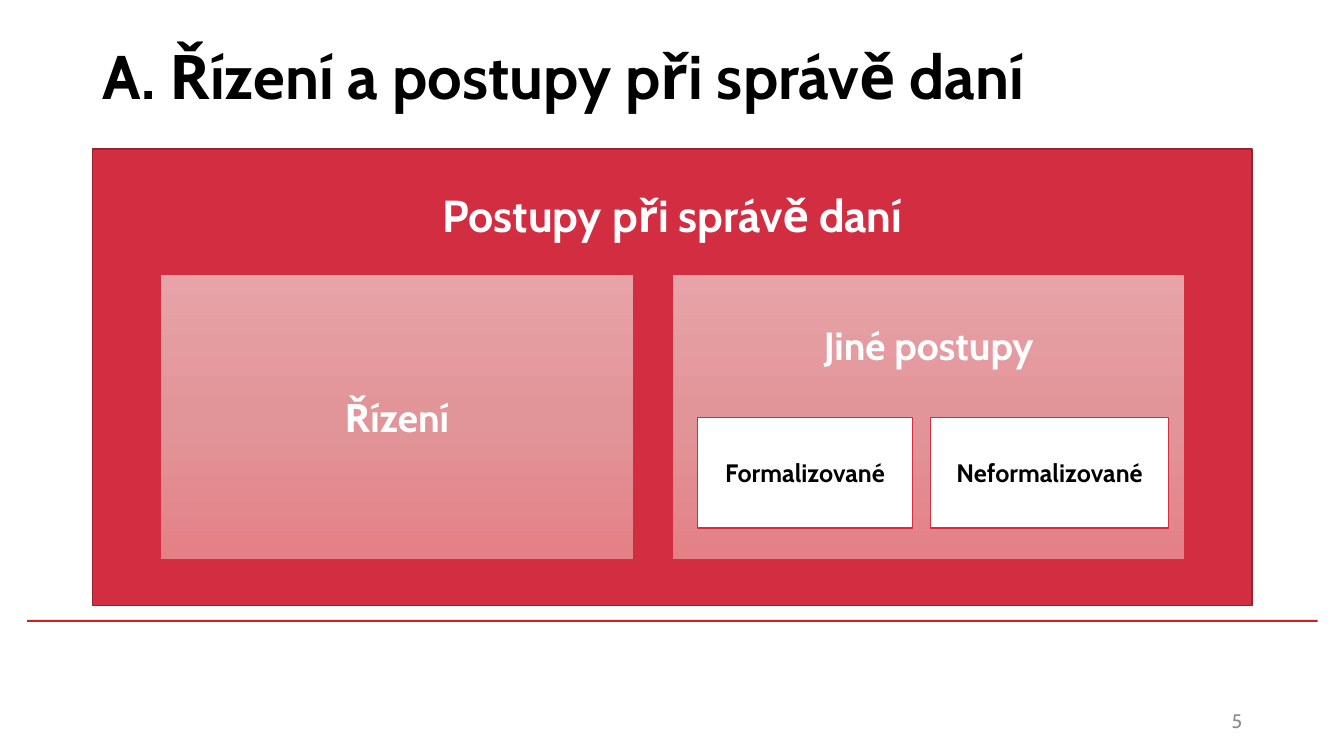
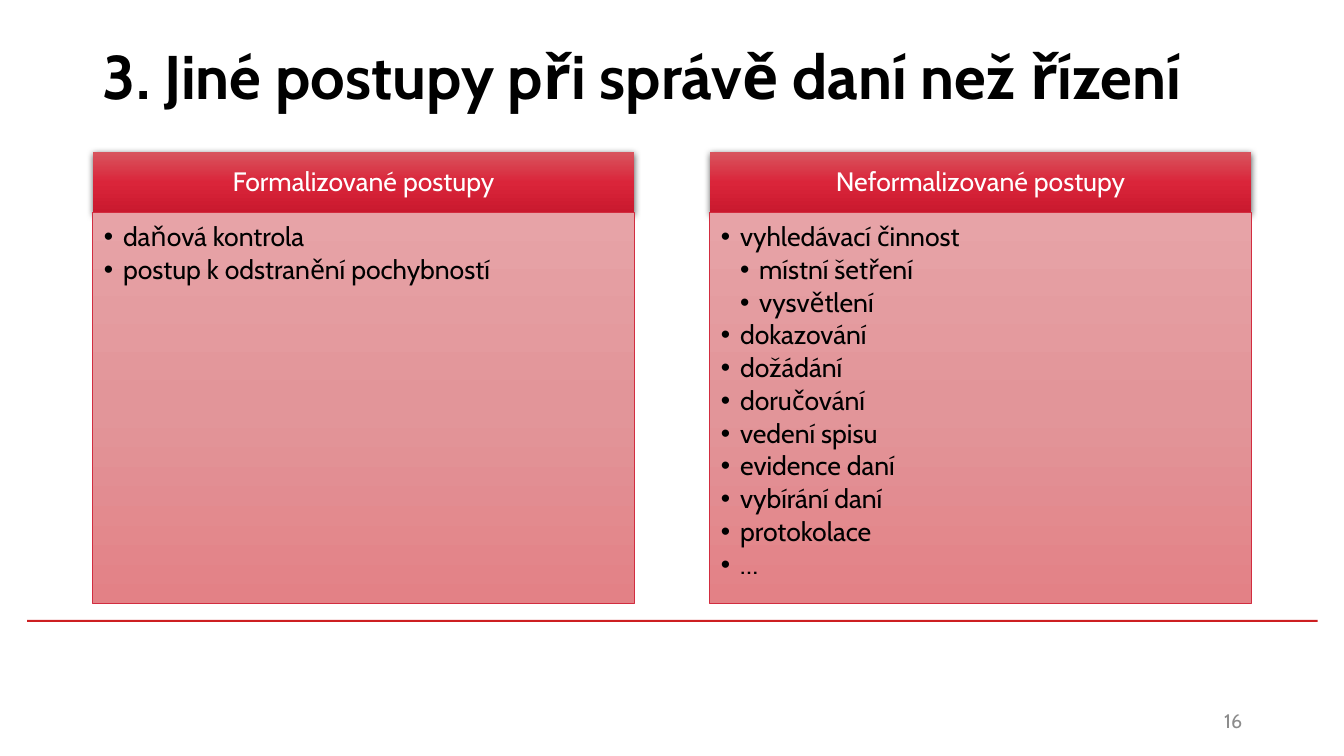
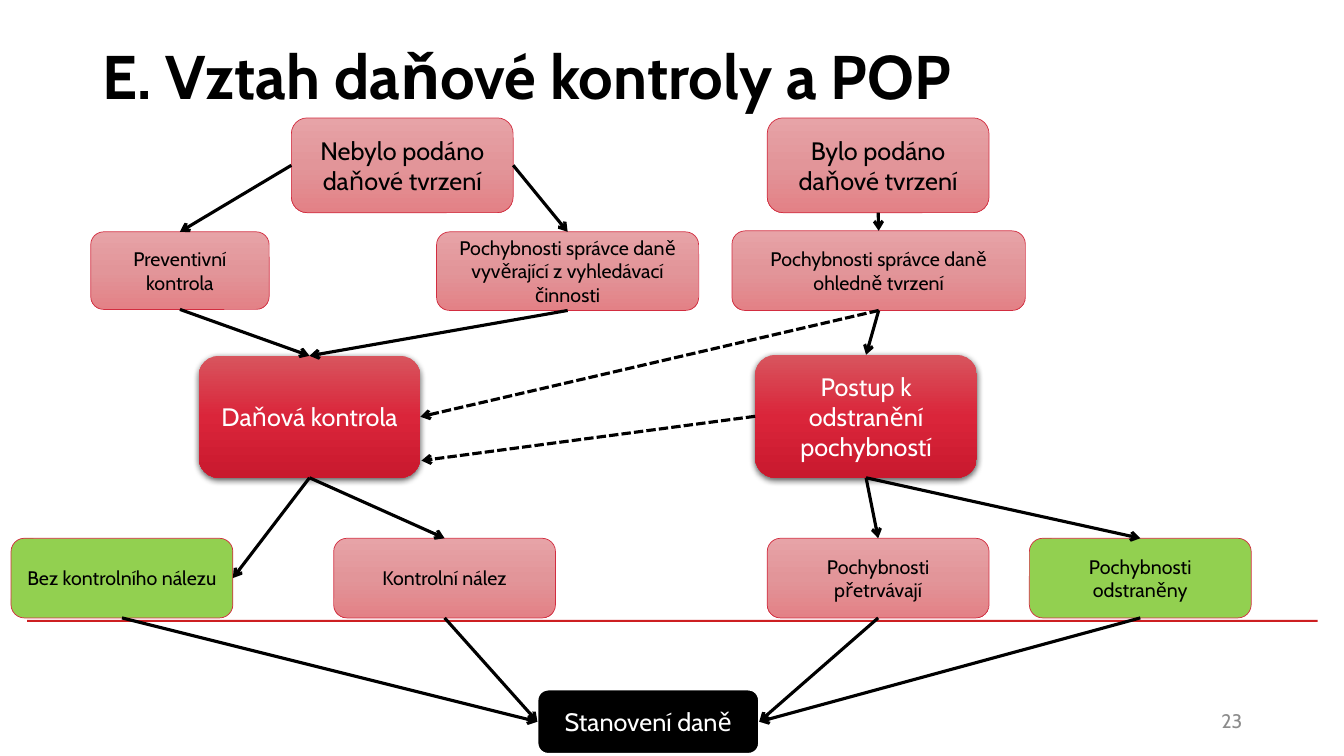
from dataclasses import dataclass
from typing import Any, Optional, Sequence

import lxml.etree
import pptx
import pptx.dml.color
import pptx.enum.dml
import pptx.enum.shapes
import pptx.enum.text
import pptx.oxml.ns
import pptx.util

Inches = pptx.util.Inches
Pt = pptx.util.Pt
qn = pptx.oxml.ns.qn
Align = pptx.enum.text.PP_ALIGN
Anchor = pptx.enum.text.MSO_ANCHOR
Preset = pptx.enum.shapes.MSO_SHAPE


# Shared look
@dataclass(frozen=True)
class Theme:
    font: str = "Cabin"
    black: str = "000000"
    white: str = "FFFFFF"
    grey: str = "8C8C8C"
    rule: str = "CD1F21"
    red: str = "D22D40"
    dark_red: str = "9B212F"
    green: str = "92D050"
    pink_gradient: tuple[str, ...] = ("E7A3A7", "E29599", "E38186")
    red_gradient: tuple[str, ...] = ("D8555E", "DA253A", "C9192E")
    title_size: int = 44
    heading_size: int = 32
    subheading_size: int = 28
    list_size: int = 19
    label_size: int = 18
    small_size: int = 14


THEME = Theme()


@dataclass(frozen=True)
class Style:
    """One fill colour is solid, several make a vertical gradient."""
    fill: tuple[str, ...]
    line: Optional[str] = THEME.red
    line_width: float = 0.5
    text: str = THEME.black
    shadow: bool = False


PINK = Style(THEME.pink_gradient)
PINK_WHITE_TEXT = Style(THEME.pink_gradient, text=THEME.white)
RED = Style(THEME.red_gradient, line=None, text=THEME.white, shadow=True)
GREEN = Style((THEME.green,))
BLACK = Style((THEME.black,), THEME.white, 1.5, THEME.white)
FRAME = Style((THEME.red,), THEME.dark_red, 1, THEME.white)
OUTLINED = Style((THEME.white,), line_width=1)
RULE = Style((THEME.rule,), line=None)


@dataclass(frozen=True)
class Area:
    left: float
    top: float
    width: float
    height: float

    def lengths(self) -> list[int]:
        return [Inches(value) for value in (self.left, self.top, self.width, self.height)]


@dataclass(frozen=True)
class Box:
    text: str
    area: Area
    style: Style = PINK
    size: int = THEME.small_size
    bold: bool = False
    top_inset: Optional[float] = None


@dataclass(frozen=True)
class Link:
    start: str
    start_side: int
    end: str
    end_side: int
    dashed: bool = False


@dataclass(frozen=True)
class Column:
    heading: str
    items: tuple[str, ...]
    sub_items: tuple[str, ...] = ()


TITLE_AREA = Area(0.92, 0.02, 11.5, 1.45)
NUMBER_AREA = Area(9.42, 6.95, 3, 0.4)
RULE_AREA = Area(0.27, 6.15, 12.8, 0.02)
TOP, LEFT, BOTTOM, RIGHT = range(4)


def rgb(colour: str) -> pptx.dml.color.RGBColor:
    return pptx.dml.color.RGBColor.from_string(colour)


def add_xml(parent: Any, tag: str, **attributes: Any) -> Any:
    values = {name: str(value) for name, value in attributes.items()}
    return lxml.etree.SubElement(parent, qn(tag), values)


def write_text(text_frame: Any, text: str, *, size: float, colour: str = THEME.black,
               bold: bool = False, align: Any = Align.LEFT, anchor: Any = Anchor.MIDDLE,
               insets: Sequence[float] = (0.1, 0.05, 0.1, 0.05), line_spacing: float = 1.0,
               space_after: float = 0, levels: Sequence[int] = ()) -> None:
    """Write one paragraph per line; levels, if given, turn them into bullets."""
    text_frame.word_wrap = True
    text_frame.auto_size = pptx.enum.text.MSO_AUTO_SIZE.NONE
    text_frame.vertical_anchor = anchor
    (text_frame.margin_left, text_frame.margin_top,
     text_frame.margin_right, text_frame.margin_bottom) = map(Inches, insets)
    for index, line in enumerate(text.split("\n")):
        paragraph = text_frame.paragraphs[0] if index == 0 else text_frame.add_paragraph()
        paragraph.alignment = align
        paragraph.line_spacing = line_spacing
        paragraph.space_before = Pt(0)
        paragraph.space_after = Pt(space_after)
        properties = paragraph._p.get_or_add_pPr()
        if levels:
            paragraph.level = levels[index]
            properties.set("marL", str(Inches(0.19) * levels[index]))
            properties.set("indent", str(-Inches(0.19)))
            add_xml(properties, "a:buFont", typeface="Arial")
            add_xml(properties, "a:buChar", char="•")
        else:
            properties.set("marL", "0")
            properties.set("indent", "0")
            add_xml(properties, "a:buNone")
        run = paragraph.add_run()
        run.text = line
        run.font.name = THEME.font
        run.font.size = Pt(size)
        run.font.bold = bold
        run.font.color.rgb = rgb(colour)


def place(shape: Any, area: Area) -> None:
    shape.left, shape.top, shape.width, shape.height = area.lengths()


def apply_style(shape: Any, style: Style) -> None:
    if len(style.fill) == 1:
        shape.fill.solid()
        shape.fill.fore_color.rgb = rgb(style.fill[0])
    else:
        shape.fill.gradient()
        shape.fill.gradient_angle = 270
        stops = shape.element.spPr.find(qn("a:gradFill")).find(qn("a:gsLst"))
        for stop in list(stops):
            stops.remove(stop)
        for index, colour in enumerate(style.fill):
            stop = add_xml(stops, "a:gs", pos=100000 * index // (len(style.fill) - 1))
            add_xml(stop, "a:srgbClr", val=colour)
    if style.line:
        shape.line.color.rgb = rgb(style.line)
        shape.line.width = Pt(style.line_width)
    else:
        shape.line.fill.background()
    shape.shadow.inherit = False
    if style.shadow:
        effects = shape.element.spPr.find(qn("a:effectLst"))
        shadow = add_xml(effects, "a:outerShdw", blurRad=Pt(4.5), dist=Pt(1.5),
                         dir=5400000, rotWithShape=0)
        add_xml(add_xml(shadow, "a:srgbClr", val=THEME.black), "a:alpha", val=63000)


def add_box(slide: Any, box: Box, preset: Any = Preset.RECTANGLE) -> Any:
    shape = slide.shapes.add_shape(preset, *box.area.lengths())
    apply_style(shape, box.style)
    from_top = box.top_inset is not None
    write_text(shape.text_frame, box.text, size=box.size, colour=box.style.text,
               bold=box.bold, align=Align.CENTER,
               anchor=Anchor.TOP if from_top else Anchor.MIDDLE,
               insets=(0.1, box.top_inset if from_top else 0.05, 0.1, 0.05))
    return shape


def add_arrow(slide: Any, dashed: bool = False) -> Any:
    connector = slide.shapes.add_connector(pptx.enum.shapes.MSO_CONNECTOR.STRAIGHT, 0, 0, 0, 0)
    connector.line.color.rgb = rgb(THEME.black)
    connector.line.width = Pt(2.25)
    if dashed:
        connector.line.dash_style = pptx.enum.dml.MSO_LINE.SQUARE_DOT
    properties = connector.element.spPr
    add_xml(properties.find(qn("a:ln")), "a:tailEnd", type="arrow")
    add_xml(properties, "a:effectLst")
    return connector


def add_slide(presentation: Any, layout_name: str, title: str, number: int) -> Any:
    layout = presentation.slide_layouts.get_by_name(layout_name)
    slide = presentation.slides.add_slide(layout)
    place(slide.shapes.title, TITLE_AREA)
    write_text(slide.shapes.title.text_frame, title, size=THEME.title_size, bold=True)
    number_box = slide.shapes.add_textbox(*NUMBER_AREA.lengths())
    write_text(number_box.text_frame, str(number), size=THEME.small_size,
               colour=THEME.grey, align=Align.RIGHT)
    return slide


def add_master_rule(presentation: Any, slide: Any) -> None:
    """Draw the red rule and move it to the master, so every slide shows it."""
    rule = slide.shapes.add_shape(Preset.RECTANGLE, *RULE_AREA.lengths())
    apply_style(rule, RULE)
    presentation.slide_master.shapes.element.append(rule.element)


# Slide: nested procedures
def build_procedures(presentation: Any) -> None:
    slide = add_slide(presentation, "Title Only", "A. Řízení a postupy při správě daní", 5)
    add_master_rule(presentation, slide)
    boxes = (
        Box("Postupy při správě daní", Area(0.92, 1.48, 11.5, 4.53), FRAME,
            THEME.heading_size, True, 0.38),
        Box("Řízení", Area(1.59, 2.72, 4.69, 2.83), PINK_WHITE_TEXT,
            THEME.subheading_size, True),
        Box("Jiné postupy", Area(6.67, 2.72, 5.08, 2.83), PINK_WHITE_TEXT,
            THEME.subheading_size, True, 0.47),
        Box("Formalizované", Area(6.92, 4.14, 2.13, 1.1), OUTLINED, THEME.label_size, True),
        Box("Neformalizované", Area(9.23, 4.14, 2.36, 1.1), OUTLINED, THEME.label_size, True),
    )
    for box in boxes:
        add_box(slide, box)


# Slide: two lists under headings
def build_comparison(presentation: Any) -> None:
    slide = add_slide(presentation, "Comparison", "3. Jiné postupy při správě daní než řízení", 16)
    columns = (
        Column("Formalizované postupy", ("daňová kontrola", "postup k odstranění pochybností")),
        Column("Neformalizované postupy",
               ("vyhledávací činnost", "místní šetření", "vysvětlení", "dokazování", "dožádání",
                "doručování", "vedení spisu", "evidence daní", "vybírání daní", "protokolace",
                "…"),
               ("místní šetření", "vysvětlení")),
    )
    placeholders = {shape.placeholder_format.idx: shape for shape in slide.placeholders}
    for index, column in enumerate(columns):
        left = 0.92 + 6.12 * index
        heading, body = placeholders[1 + 2 * index], placeholders[2 + 2 * index]
        place(heading, Area(left, 1.51, 5.37, 0.6))
        apply_style(heading, RED)
        write_text(heading.text_frame, column.heading, size=THEME.list_size,
                   colour=RED.text, align=Align.CENTER, line_spacing=0.9,
                   insets=(0.15, 0.08, 0.15, 0.08))
        place(body, Area(left, 2.11, 5.37, 3.88))
        apply_style(body, PINK)
        write_text(body.text_frame, "\n".join(column.items), size=THEME.list_size,
                   anchor=Anchor.TOP, insets=(0.11, 0.11, 0.15, 0.17),
                   line_spacing=0.9, space_after=2.85,
                   levels=[2 if item in column.sub_items else 1 for item in column.items])


# Slide: flow from the tax return to the assessment
def build_flow(presentation: Any) -> None:
    slide = add_slide(presentation, "Title Only", "E. Vztah daňové kontroly a POP", 23)
    width, result_top, result_height = 2.2, 5.34, 0.79
    label = THEME.label_size
    boxes = {
        "not_filed": Box("Nebylo podáno daňové tvrzení", Area(2.89, 1.17, width, 0.94), size=label),
        "filed": Box("Bylo podáno daňové tvrzení", Area(7.61, 1.17, width, 0.94), size=label),
        "return_doubts": Box("Pochybnosti správce daně ohledně tvrzení",
                             Area(7.26, 2.29, 2.91, 0.79)),
        "search_doubts": Box("Pochybnosti správce daně vyvěrající z vyhledávací činnosti",
                             Area(4.33, 2.3, 2.6, 0.78)),
        "preventive": Box("Preventivní\nkontrola", Area(0.9, 2.3, 1.77, 0.77)),
        "audit": Box("Daňová kontrola", Area(1.97, 3.53, width, 1.21), RED, label),
        "removal": Box("Postup k odstranění pochybností", Area(7.49, 3.52, width, 1.22),
                       RED, label),
        "doubts_remain": Box("Pochybnosti přetrvávají",
                             Area(7.61, result_top, width, result_height)),
        "doubts_removed": Box("Pochybnosti odstraněny",
                              Area(10.21, result_top, width, result_height), GREEN),
        "no_finding": Box("Bez kontrolního nálezu",
                          Area(0.11, result_top, width, result_height), GREEN),
        "finding": Box("Kontrolní nález", Area(3.31, result_top, width, result_height)),
        "assessment": Box("Stanovení daně", Area(5.33, 6.84, width, 0.64), BLACK, label),
    }
    links = (
        Link("not_filed", LEFT, "preventive", TOP),
        Link("not_filed", RIGHT, "search_doubts", TOP),
        Link("filed", BOTTOM, "return_doubts", TOP),
        Link("preventive", BOTTOM, "audit", TOP),
        Link("search_doubts", BOTTOM, "audit", TOP),
        Link("return_doubts", BOTTOM, "removal", TOP),
        Link("return_doubts", BOTTOM, "audit", RIGHT, dashed=True),
        Link("audit", BOTTOM, "no_finding", RIGHT),
        Link("audit", BOTTOM, "finding", TOP),
        Link("removal", BOTTOM, "doubts_remain", TOP),
        Link("removal", BOTTOM, "doubts_removed", TOP),
        Link("no_finding", BOTTOM, "assessment", LEFT),
        Link("finding", BOTTOM, "assessment", LEFT),
        Link("doubts_remain", BOTTOM, "assessment", RIGHT),
        Link("doubts_removed", BOTTOM, "assessment", RIGHT),
    )
    shapes = {name: add_box(slide, box, Preset.ROUNDED_RECTANGLE) for name, box in boxes.items()}
    for link in links:
        connector = add_arrow(slide, link.dashed)
        connector.begin_connect(shapes[link.start], link.start_side)
        connector.end_connect(shapes[link.end], link.end_side)

    # This arrow ends below the middle of the audit box
    handover = add_arrow(slide, dashed=True)
    handover.begin_connect(shapes["removal"], LEFT)
    handover.end_x, handover.end_y = Inches(4.18), Inches(4.57)


def main() -> None:
    presentation = pptx.Presentation()
    presentation.slide_width = Inches(13.33)
    presentation.slide_height = Inches(7.5)
    build_procedures(presentation)
    build_comparison(presentation)
    build_flow(presentation)
    presentation.save("out.pptx")


if __name__ == "__main__":
    main()
